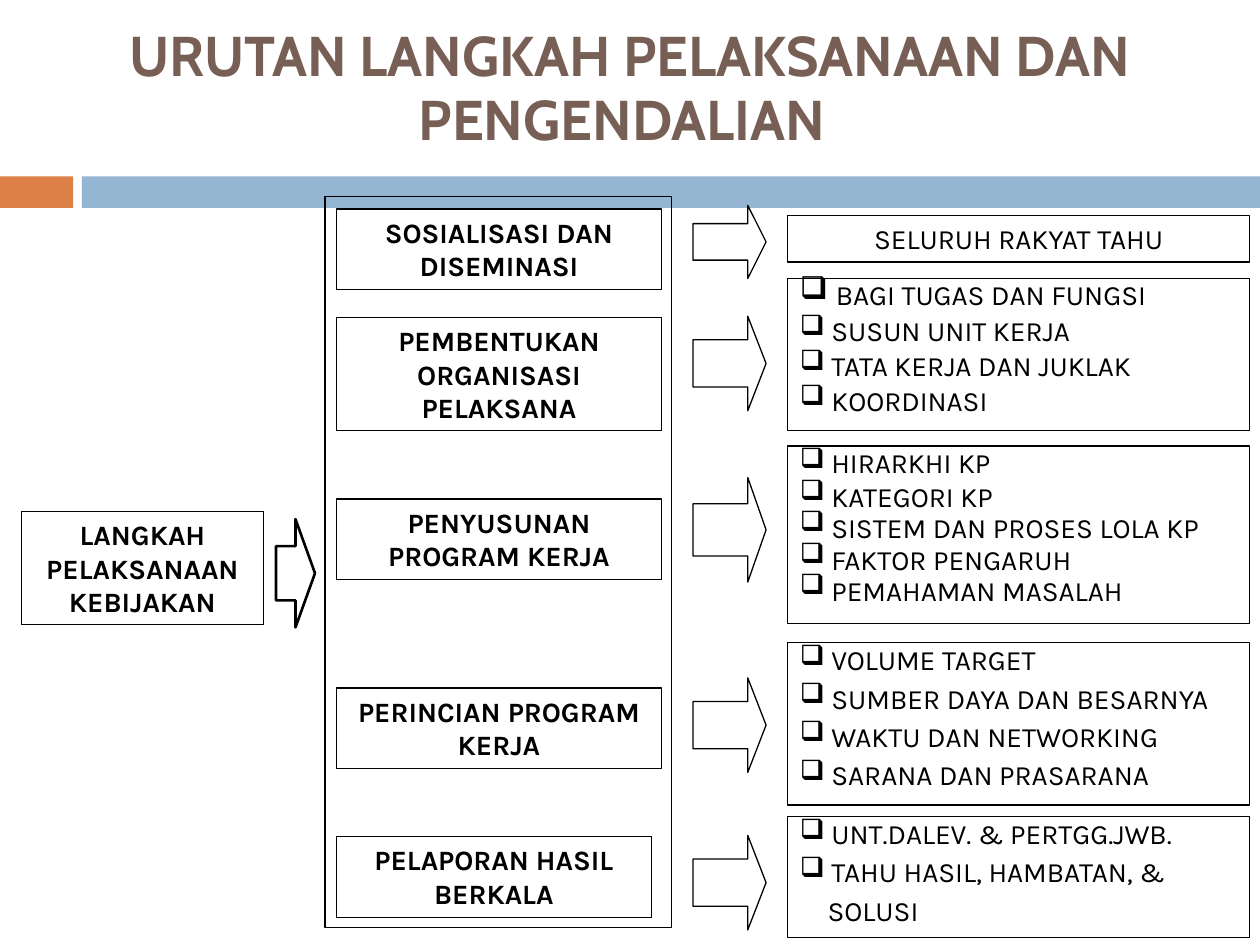
from lxml.etree import SubElement
from pptx import Presentation
from pptx.dml.color import RGBColor
from pptx.enum.shapes import MSO_SHAPE
from pptx.enum.text import MSO_ANCHOR, PP_ALIGN
from pptx.oxml.ns import qn
from pptx.util import Inches, Pt

# Content
TITLE = "URUTAN LANGKAH PELAKSANAAN DAN PENGENDALIAN"
BARS = [(0, 0.58, "DD8047"), (0.65, 9.35, "94B6D2")]  # left, width, colour
START = "LANGKAH PELAKSANAAN KEBIJAKAN"
STEPS = [  # text, top, width, height
    ("SOSIALISASI DAN DISEMINASI", 1.66, 2.58, 0.64),
    ("PEMBENTUKAN ORGANISASI PELAKSANA", 2.52, 2.58, 0.9),
    ("PENYUSUNAN PROGRAM KERJA", 3.96, 2.58, 0.64),
    ("PERINCIAN PROGRAM KERJA", 5.46, 2.58, 0.64),
    ("PELAPORAN HASIL BERKALA", 6.64, 2.5, 0.64),
]
ARROWS = [(1.63, 0.58), (2.51, 0.75), (3.79, 0.83), (5.38, 0.75), (6.63, 0.75)]
GOAL = "SELURUH RAKYAT TAHU"
LISTS = [  # top, height, hanging indent, first and later line spacing, items
    (2.21, 1.21, 0, 0.7, 0.6, ["BAGI TUGAS DAN FUNGSI", "SUSUN UNIT KERJA",
                               "TATA KERJA DAN JUKLAK", "KOORDINASI"]),
    (3.54, 1.41, 0.13, 0.8, 0.5, ["HIRARKHI KP", "KATEGORI KP",
                                  "SISTEM DAN PROSES LOLA KP",
                                  "FAKTOR PENGARUH", "PEMAHAMAN MASALAH"]),
    (5.1, 1.29, 0, 0.8, 0.7, ["VOLUME TARGET", "SUMBER DAYA DAN BESARNYA",
                              "WAKTU DAN NETWORKING", "SARANA DAN PRASARANA"]),
    (6.48, 0.96, 0, 0.8, 0.7, ["UNT.DALEV. & PERTGG.JWB.",
                               "TAHU HASIL, HAMBATAN, &"]),
]
TAIL = "SOLUSI"  # runs on from the last item
STEP_X, ARROW_X, LIST_X, LIST_W = 2.67, 5.5, 6.25, 3.67

deck = Presentation()
deck.slide_width, deck.slide_height = Inches(10), Inches(7.5)
slide = deck.slides.add_slide(deck.slide_layouts[6])


def color(code):
    return RGBColor.from_string(code)


def shape(x, y, w, h, kind=MSO_SHAPE.RECTANGLE, fill=None, line=0.75):
    item = slide.shapes.add_shape(kind, *map(Inches, (x, y, w, h)))
    item.shadow.inherit = False
    if fill:
        item.fill.solid()
        item.fill.fore_color.rgb = color(fill)
        item.line.fill.background()
    else:
        item.fill.background()
        item.line.color.rgb = color("000000")
        item.line.width = Pt(line)
    frame = item.text_frame
    frame.word_wrap = True
    frame.vertical_anchor = MSO_ANCHOR.TOP
    return item


def run(para, text, size=16, bold=False, font="Karla", ink="000000"):
    part = para.add_run()
    part.text = text
    part.font.name, part.font.size, part.font.bold = font, Pt(size), bold
    part.font.color.rgb = color(ink)


def label(x, y, w, h, text, bold=True):
    para = shape(x, y, w, h).text_frame.paragraphs[0]
    para.alignment = PP_ALIGN.CENTER
    run(para, text, bold=bold)


def entry(frame, first, space, indent=0, hang=0, bullet=True):
    para = frame.paragraphs[0] if first else frame.add_paragraph()
    para.alignment = PP_ALIGN.LEFT
    para.line_spacing = space
    para.space_before = Pt(8.4)
    props = para._p.get_or_add_pPr()
    props.set("marL", str(Inches(indent)))
    props.set("indent", str(-Inches(hang)))
    if bullet:
        SubElement(props, qn("a:buChar")).set("char", "❑")
    return para


# Band under the title
for x, w, fill in BARS:
    shape(x, 1.4, w, 0.25, fill=fill)

# Frame round the steps
shape(2.58, 1.56, 2.75, 5.8)

# Title; the larger trailing space sets the height of its last line
frame = slide.shapes.add_textbox(*map(Inches, (0, 0.16, 10, 1.17))).text_frame
frame.word_wrap = True
frame.vertical_anchor = MSO_ANCHOR.MIDDLE
head = frame.paragraphs[0]
head.alignment, head.line_spacing = PP_ALIGN.CENTER, 0.8
run(head, TITLE, 32, True, "Cabin", "775F55")
run(head, " ", 40, False, "Cabin", "775F55")

# Start, steps and first goal
label(0.17, 4.06, 1.92, 0.9, START)
for text, y, w, h in STEPS:
    label(STEP_X, y, w, h, text)
label(LIST_X, 1.71, LIST_W, 0.37, GOAL, bold=False)

# Check lists
for n, (y, h, hang, lead, rest, items) in enumerate(LISTS):
    frame = shape(LIST_X, y, LIST_W, h).text_frame
    for i, text in enumerate(items):
        para = entry(frame, i == 0, rest if i else lead, hang, hang)
        if n == i == 0:
            run(para, " ", 18, font="Times New Roman")
            run(para, text)
        else:
            run(para, " " + text)
run(entry(frame, False, rest, indent=0.22, bullet=False), TAIL)

# Arrows
for y, h in ARROWS:
    arrow = shape(ARROW_X, y, 0.58, h, MSO_SHAPE.RIGHT_ARROW)
    arrow.adjustments[1] = 0.25
shape(2.19, 4.12, 0.31, 0.86, MSO_SHAPE.RIGHT_ARROW, line=1.5)

deck.save("out.pptx")
